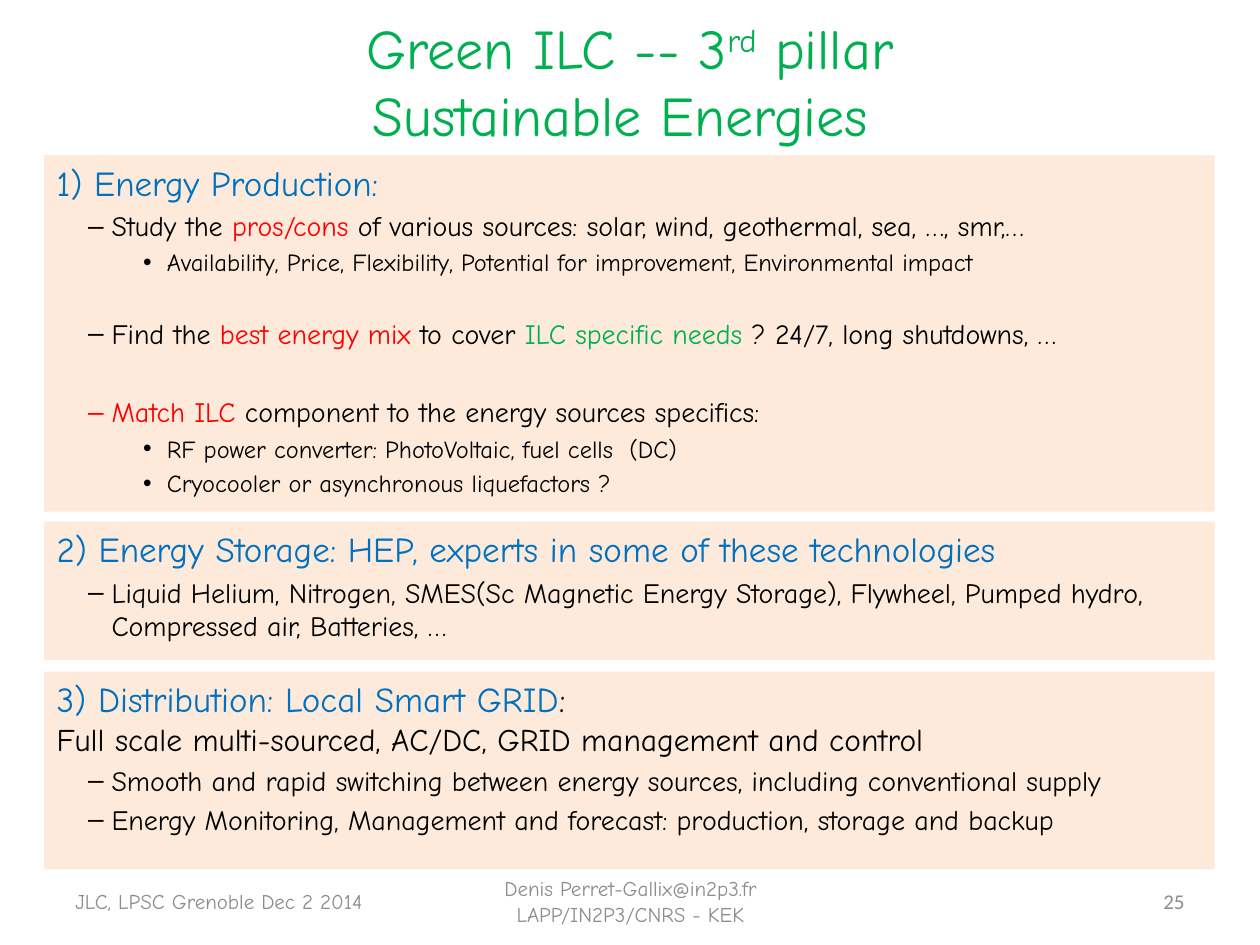
from dataclasses import dataclass

from lxml import etree
from pptx import Presentation
from pptx.dml.color import RGBColor
from pptx.enum.shapes import MSO_SHAPE
from pptx.enum.text import MSO_ANCHOR, PP_ALIGN
from pptx.oxml.ns import qn
from pptx.util import Pt

LEFT, CENTER, RIGHT = PP_ALIGN.LEFT, PP_ALIGN.CENTER, PP_ALIGN.RIGHT
TOP, MIDDLE = MSO_ANCHOR.TOP, MSO_ANCHOR.MIDDLE
RECTANGLE = MSO_SHAPE.RECTANGLE
BLANK_LAYOUT = 6


@dataclass(frozen=True)
class Theme:
    font: str = "Comic Neue"
    number_font: str = "Calibri"
    black: str = "000000"
    blue: str = "0070C0"
    green: str = "00B050"
    red: str = "FF0000"
    grey: str = "8C8C8C"
    panel: str = "FDEADA"
    title: int = 32
    heading: int = 20
    lead: int = 18
    item: int = 16
    detail: int = 14
    footer: int = 12


THEME = Theme()
PANEL_LEFT, PANEL_WIDTH = 25.2, 668.9
HANGING = 13.5
SPACE_RATIO = 0.2


def add_span(para, text, *, size, color=THEME.black, font=THEME.font, raised=False):
    """Add formatted text; a newline in it becomes a line break."""
    for index, part in enumerate(text.split("\n")):
        if index:
            para.add_line_break()
        if not part:
            continue
        span = para.add_run()
        span.text = part
        span.font.size = Pt(size)
        span.font.name = font
        span.font.color.rgb = RGBColor.from_string(color)
        if raised:
            span.font._element.set("baseline", "30000")


def set_bullet(para, mark, indent):
    properties = para._p.get_or_add_pPr()
    properties.set("marL", str(Pt(indent)))
    properties.set("indent", str(-Pt(HANGING)))
    etree.SubElement(properties, qn("a:buFont")).set("typeface", "Arial")
    etree.SubElement(properties, qn("a:buChar")).set("char", mark)


def add_text_box(page, left, top, width, height, align):
    """Return the paragraph of a new, vertically centred text box."""
    frame = page.shapes.add_textbox(Pt(left), Pt(top), Pt(width), Pt(height)).text_frame
    frame.word_wrap = True
    frame.vertical_anchor = MIDDLE
    para = frame.paragraphs[0]
    para.alignment = align
    return para


def add_panel(page, top, height, heading):
    """Draw a panel with its heading and return its text frame."""
    box = page.shapes.add_shape(
        RECTANGLE, Pt(PANEL_LEFT), Pt(top), Pt(PANEL_WIDTH), Pt(height))
    box.shadow.inherit = False
    box.fill.solid()
    box.fill.fore_color.rgb = RGBColor.from_string(THEME.panel)
    box.line.fill.background()
    frame = box.text_frame
    frame.word_wrap = True
    frame.vertical_anchor = TOP
    para = frame.paragraphs[0]
    para.alignment = LEFT
    add_span(para, heading, size=THEME.heading, color=THEME.blue)
    return frame


def add_bullet(frame, parts, mark, indent, size, gap):
    """Add a bullet made of (text, color) parts, with an extra gap above it."""
    para = frame.add_paragraph()
    set_bullet(para, mark, indent)
    para.alignment = LEFT
    para.space_before = Pt(round(size * SPACE_RATIO + gap, 1))
    for text, color in parts:
        add_span(para, text, size=size, color=color)


def add_item(frame, *parts, gap=0):
    add_bullet(frame, parts, "–", 31.5, THEME.item, gap)


def add_detail(frame, text):
    add_bullet(frame, [(text, THEME.black)], "•", 63, THEME.detail, 0)


def add_title(page):
    para = add_text_box(page, 144.7, 3.6, 430.6, 85, CENTER)
    style = {"size": THEME.title, "color": THEME.green}
    add_span(para, "Green ILC -- 3", **style)
    add_span(para, "rd", raised=True, **style)
    add_span(para, " pillar\nSustainable Energies ", **style)


def add_production(page):
    black, red, green = THEME.black, THEME.red, THEME.green
    frame = add_panel(page, 88.6, 203.8, "1) Energy Production:")
    add_item(frame, ("Study the ", black), ("pros/cons", red),
             (" of various sources: solar, wind, geothermal, sea, …, smr,…", black))
    add_detail(frame, "Availability, Price, Flexibility, Potential for improvement, "
                      "Environmental impact")
    add_item(frame, ("Find the ", black), ("best energy mix ", red), ("to cover ", black),
             ("ILC specific needs ", green), ("? 24/7, long shutdowns, …", black), gap=19.4)
    add_item(frame, ("Match ILC", red),
             (" component to the energy sources specifics:", black), gap=22.6)
    add_detail(frame, "RF power converter: PhotoVoltaic, fuel cells  (DC)")
    add_detail(frame, "Cryocooler or asynchronous liquefactors ?")


def add_storage(page):
    frame = add_panel(page, 298.1, 79.2,
                      "2) Energy Storage: HEP, experts in some of these technologies")
    add_item(frame, ("Liquid Helium, Nitrogen, SMES(Sc Magnetic Energy Storage), Flywheel, "
                     "Pumped hydro, Compressed air, Batteries, …", THEME.black))


def add_distribution(page):
    frame = add_panel(page, 383.8, 113, "3) Distribution: Local Smart GRID")
    heading = frame.paragraphs[0]
    add_span(heading, ": \n", size=THEME.heading)
    add_span(heading, "Full scale multi-sourced, AC/DC, GRID management and control",
             size=THEME.lead)
    for text in (
        "Smooth and rapid switching between energy sources, including conventional supply",
        "Energy Monitoring, Management and forecast: production, storage and backup",
    ):
        add_item(frame, (text, THEME.black))


def add_footer(page):
    for left, width, align, font, text in (
        (36, 193.7, LEFT, THEME.font, "JLC, LPSC Grenoble Dec 2 2014"),
        (246.2, 228.2, CENTER, THEME.font,
         "Denis Perret-Gallix@in2p3.fr LAPP/IN2P3/CNRS - KEK"),
        (516, 168, RIGHT, THEME.number_font, "25"),
    ):
        para = add_text_box(page, left, 500.5, width, 28.8, align)
        add_span(para, text, size=THEME.footer, color=THEME.grey, font=font)


def main():
    deck = Presentation()
    deck.slide_width, deck.slide_height = Pt(720), Pt(540)
    page = deck.slides.add_slide(deck.slide_layouts[BLANK_LAYOUT])
    add_title(page)
    add_production(page)
    add_storage(page)
    add_distribution(page)
    add_footer(page)
    deck.save("out.pptx")


if __name__ == "__main__":
    main()
